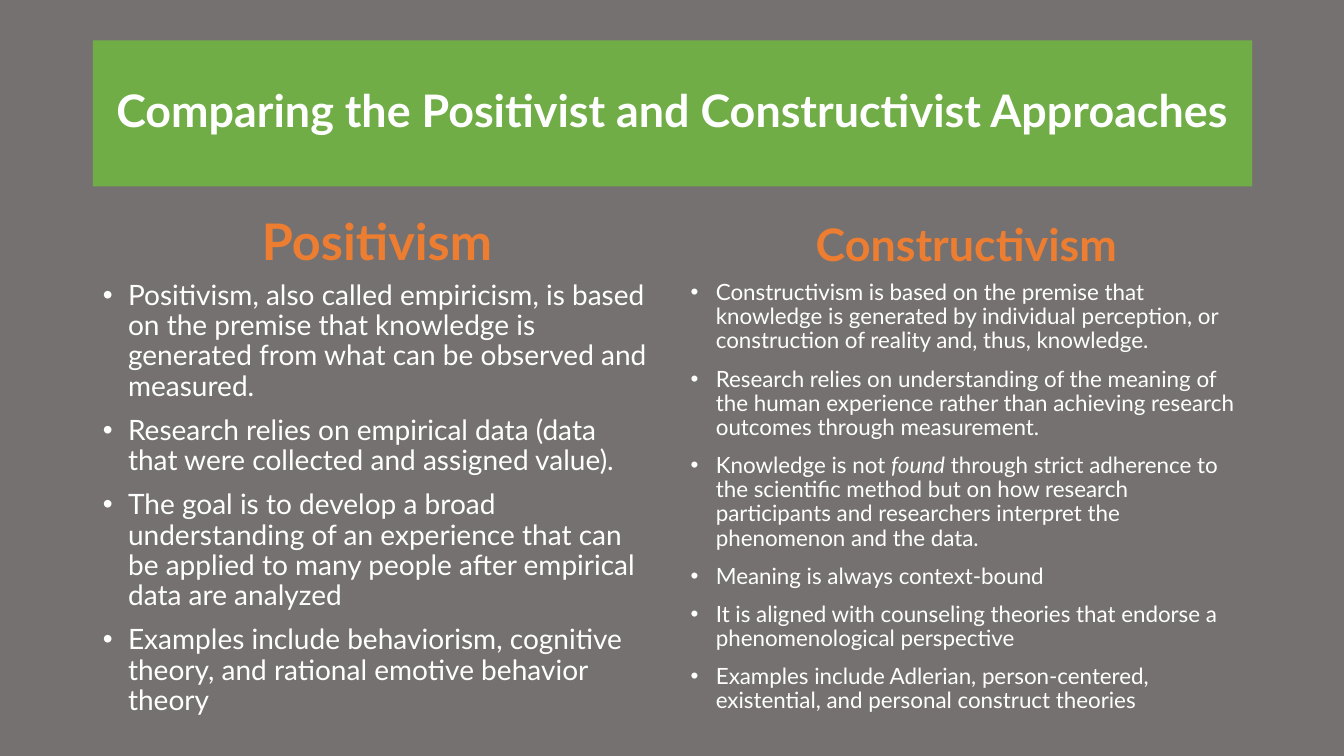
from pptx import Presentation
from pptx.dml.color import RGBColor
from pptx.enum.text import MSO_ANCHOR as Anchor, MSO_AUTO_SIZE as AutoSize, PP_ALIGN as Align
from pptx.util import Inches, Pt

GRAY = RGBColor(0x76, 0x71, 0x71)
GREEN = RGBColor(0x70, 0xAD, 0x47)
ORANGE = RGBColor(0xED, 0x7D, 0x31)
WHITE = RGBColor(0xFF, 0xFF, 0xFF)

LEFT, RIGHT = 0.92, 12.42
TITLE_TOP, HEADING_TOP, LIST_TOP, BOTTOM = 0.4, 1.84, 2.74, 7.1

# Each point is a list of runs; every second run is italic.
APPROACHES = [
    ("Positivism", 36, LEFT, 6.56, 20, [
        ["Positivism, also called empiricism, is based on the premise that knowledge is "
         "generated from what can be observed and measured."],
        ["Research relies on empirical data (data that were collected and assigned value)."],
        ["The goal is to develop a broad understanding of an experience that can be applied "
         "to many people after empirical data are analyzed"],
        ["Examples include behaviorism, cognitive theory, and rational emotive behavior theory"],
    ]),
    ("Constructivism", 32, 6.75, RIGHT, 16, [
        ["Constructivism is based on the premise that knowledge is generated by individual "
         "perception, or construction of reality and, thus, knowledge."],
        ["Research relies on understanding of the meaning of the human experience rather than "
         "achieving research outcomes through measurement."],
        ["Knowledge is not ", "found", " through strict adherence to the scientific method but "
         "on how research participants and researchers interpret the phenomenon and the data."],
        ["Meaning is always context-bound"],
        ["It is aligned with counseling theories that endorse a phenomenological perspective"],
        ["Examples include Adlerian, person-centered, existential, and personal construct theories"],
    ]),
]


def place(holder, left, top, right, bottom, anchor):
    """Move a placeholder to the given edges and return its text frame."""
    holder.left, holder.top = Inches(left), Inches(top)
    holder.width, holder.height = Inches(right - left), Inches(bottom - top)
    frame = holder.text_frame
    frame.auto_size = AutoSize.NONE
    frame.word_wrap = True
    frame.vertical_anchor = anchor
    return frame


def write(paragraph, runs, size, color, align, before=10, bold=False):
    """Fill a paragraph run by run, with every second run in italics."""
    paragraph.alignment = align
    paragraph.line_spacing = 0.9
    paragraph.space_before = Pt(before)
    for number, text in enumerate(runs):
        run = paragraph.add_run()
        run.text = text
        font = run.font
        font.name, font.size, font.bold = "Lato", Pt(size), bold
        font.italic = number % 2 == 1
        font.color.rgb = color


deck = Presentation()
deck.slide_width, deck.slide_height = Inches(13.33), Inches(7.5)
slide = deck.slides.add_slide(deck.slide_layouts.get_by_name("Comparison"))
slide.background.fill.solid()
slide.background.fill.fore_color.rgb = GRAY

title = slide.shapes.title
title.fill.solid()
title.fill.fore_color.rgb = GREEN
title_frame = place(title, LEFT, TITLE_TOP, RIGHT, 1.85, Anchor.MIDDLE)
write(title_frame.paragraphs[0], ["Comparing the Positivist and Constructivist Approaches"],
      32, WHITE, Align.CENTER, before=0, bold=True)

headings_and_lists = list(slide.placeholders)[1:]
for column, (name, name_size, left, right, point_size, points) in enumerate(APPROACHES):
    heading, listing = headings_and_lists[2 * column:2 * column + 2]
    heading_frame = place(heading, left, HEADING_TOP, right, LIST_TOP, Anchor.BOTTOM)
    write(heading_frame.paragraphs[0], [name], name_size, ORANGE, Align.CENTER, bold=True)

    list_frame = place(listing, left, LIST_TOP, right, BOTTOM, Anchor.TOP)
    for number, runs in enumerate(points):
        point = list_frame.add_paragraph() if number else list_frame.paragraphs[0]
        write(point, runs, point_size, WHITE, Align.LEFT)
        properties = point._p.get_or_add_pPr()
        properties.set("marL", str(Inches(0.25)))
        properties.set("indent", str(-Inches(0.25)))

constructivism_list = headings_and_lists[-1]
constructivism_list.fill.solid()
constructivism_list.fill.fore_color.rgb = GRAY

deck.save("out.pptx")
